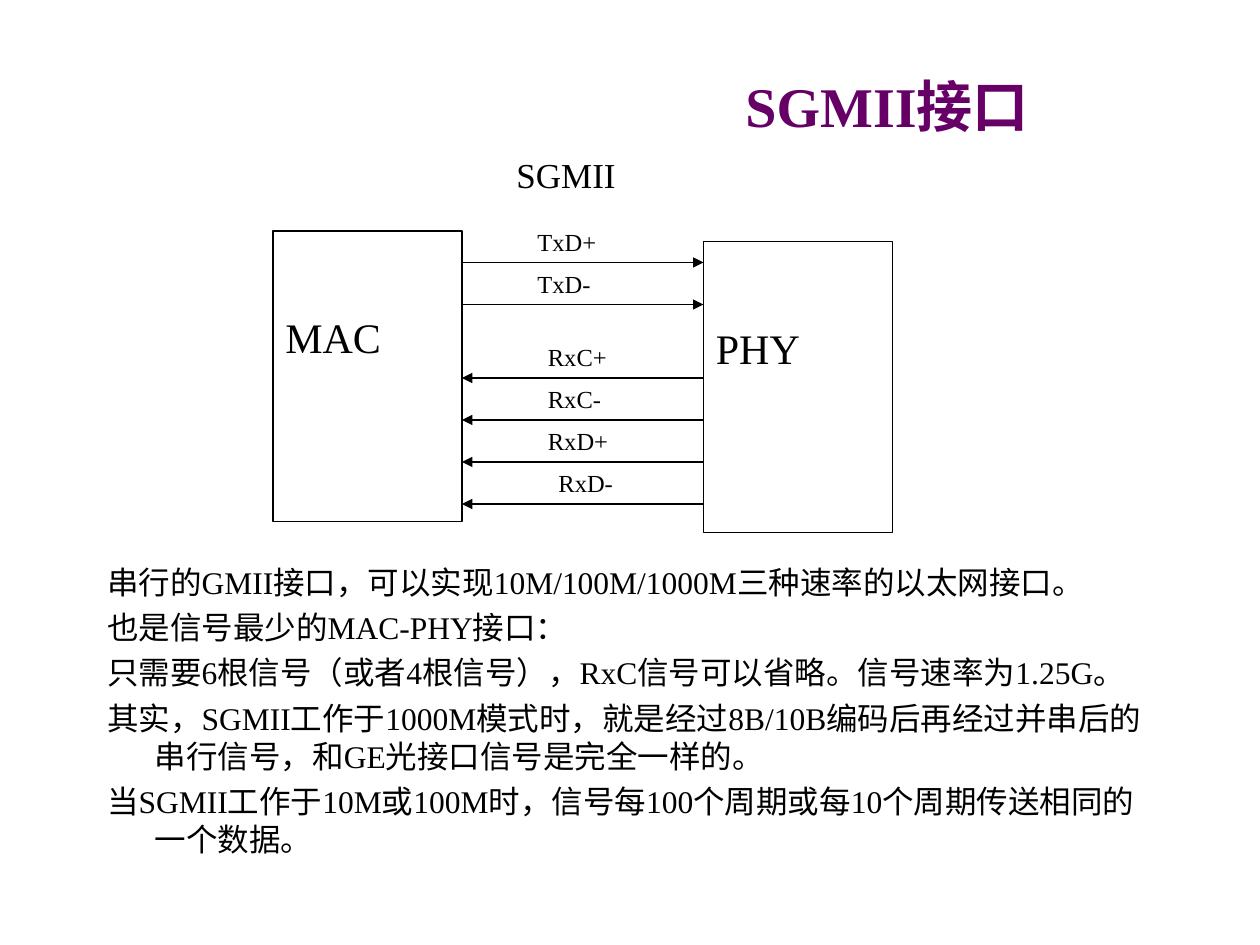
import pptx
import pptx.util
import pptx.dml.color
import pptx.enum.shapes
import pptx.enum.text
import pptx.oxml.ns
import lxml.etree

# Content
TITLE = "SGMII接口"
NOTES = [
    "串行的GMII接口，可以实现10M/100M/1000M三种速率的以太网接口。",
    "也是信号最少的MAC-PHY接口：",
    "只需要6根信号（或者4根信号），RxC信号可以省略。信号速率为1.25G。",
    "其实，SGMII工作于1000M模式时，就是经过8B/10B编码后再经过并串后的串行信号，和GE光接口信号是完全一样的。",
    "当SGMII工作于10M或100M时，信号每100个周期或每10个周期传送相同的一个数据。",
]
CAPTION = "SGMII"
# Blocks: name, left and top in grid steps
BLOCKS = [("MAC", 26, 22), ("PHY", 67, 23)]
# Signals: name, row of the arrow, label column, sent by MAC
SIGNALS = [
    ("TxD+", 25, 50, True), ("TxD-", 29, 50, True),
    ("RxC+", 36, 51, False), ("RxC-", 40, 51, False),
    ("RxD+", 44, 51, False), ("RxD-", 48, 52, False),
]
COLORS = {"title": "660066", "ink": "000000", "paper": "FFFFFF"}
FONT = "Times New Roman"
WIDE, HIGH = 18, 27.7  # block size in grid steps

Pt, Inches = pptx.util.Pt, pptx.util.Inches
ALIGN, ANCHOR = pptx.enum.text.PP_ALIGN, pptx.enum.text.MSO_ANCHOR
qn = pptx.oxml.ns.qn


def grid(*steps):
    """Twelve grid steps to the inch."""
    return [Inches(s / 12) for s in steps]


def color(name):
    return pptx.dml.color.RGBColor.from_string(COLORS[name])


def style(para, size, name="ink", bold=False):
    for run in para.runs:
        font = run.font
        font.name, font.size, font.bold = FONT, Pt(size), bold
        font.color.rgb = color(name)


def place(shape, *steps):
    shape.left, shape.top, shape.width, shape.height = grid(*steps)
    shape.fill.solid()
    shape.fill.fore_color.rgb = color("paper")
    frame = shape.text_frame
    frame.auto_size = pptx.enum.text.MSO_AUTO_SIZE.NONE
    return frame


def label(slide, text, size, *steps):
    frame = slide.shapes.add_textbox(*grid(*steps)).text_frame
    frame.word_wrap = True
    frame.text = text
    style(frame.paragraphs[0], size)


def block(slide, text, left, top):
    box = slide.shapes.add_shape(
        pptx.enum.shapes.MSO_SHAPE.RECTANGLE, *grid(left, top, WIDE, HIGH))
    box.shadow.inherit = False
    box.fill.background()
    box.line.color.rgb = color("ink")
    box.line.width = Pt(0.75)
    frame = box.text_frame
    frame.vertical_anchor = ANCHOR.TOP
    frame.margin_top = Inches(0.64)
    frame.text = text
    frame.paragraphs[0].alignment = ALIGN.LEFT
    style(frame.paragraphs[0], 24)


def arrow(slide, start, end, row):
    line = slide.shapes.add_connector(
        pptx.enum.shapes.MSO_CONNECTOR.STRAIGHT, *grid(start, row, end, row))
    line.line.color.rgb = color("ink")
    line.line.width = Pt(0.75)
    head = lxml.etree.SubElement(line.line._get_or_add_ln(), qn("a:tailEnd"))
    head.set("type", "triangle")
    lxml.etree.SubElement(line._element.spPr, qn("a:effectLst"))


def main():
    deck = pptx.Presentation()
    deck.slide_width, deck.slide_height = Inches(10), Inches(7.5)
    slide = deck.slides.add_slide(deck.slide_layouts[1])

    # Title
    frame = place(slide.shapes.title, 53, 6, 63, 8)
    frame.vertical_anchor = ANCHOR.MIDDLE
    frame.text = TITLE
    frame.paragraphs[0].alignment = ALIGN.CENTER
    style(frame.paragraphs[0], 32, "title", True)

    # Notes with a hanging indent and no bullets
    frame = place(slide.placeholders[1], 9, 53, 103, 30)
    frame.text = "\n".join(NOTES)
    for i, para in enumerate(frame.paragraphs):
        props = para._p.get_or_add_pPr()
        props.set("marL", str(Inches(0.38)))
        props.set("indent", str(Inches(-0.38)))
        lxml.etree.SubElement(props, qn("a:buNone"))
        para.space_before = Pt(4.3 if i else 0)
        style(para, 18)

    # Blocks and the signals between them
    for item in BLOCKS:
        block(slide, *item)
    near, far = BLOCKS[0][1] + WIDE, BLOCKS[1][1]
    for name, row, col, sent in SIGNALS:
        ends = (near, far) if sent else (far, near)
        arrow(slide, *ends, row)
        label(slide, name, 14, col, row - 4, 10, 4)
    label(slide, CAPTION, 20, 48, 14, 16, 5.2)

    deck.save("out.pptx")


if __name__ == "__main__":
    main()
